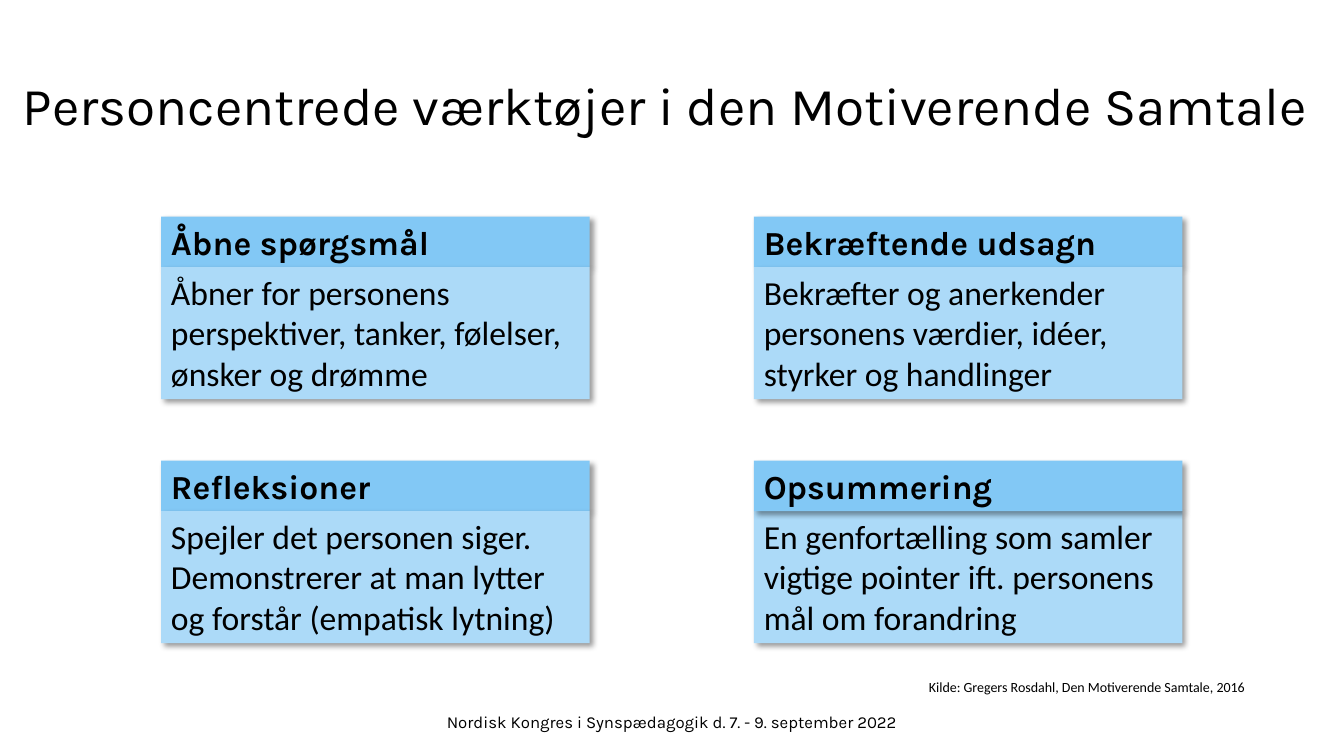
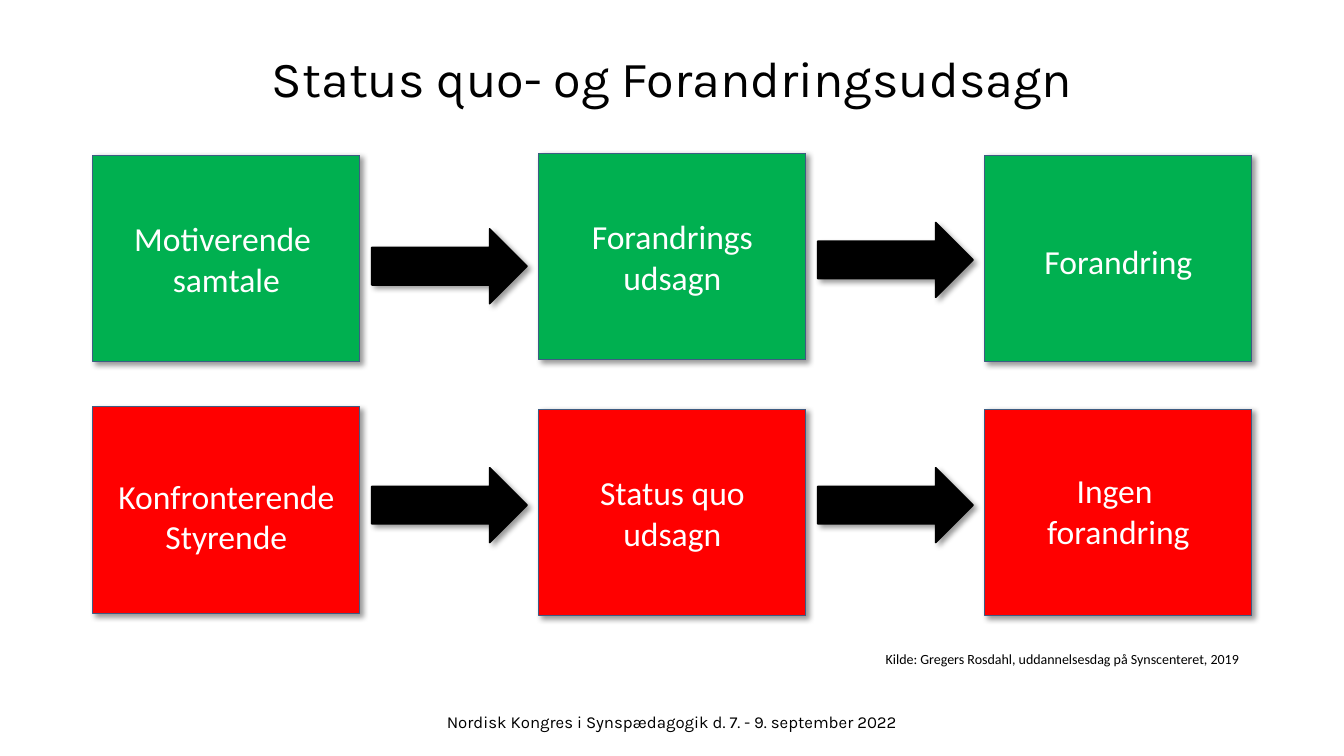
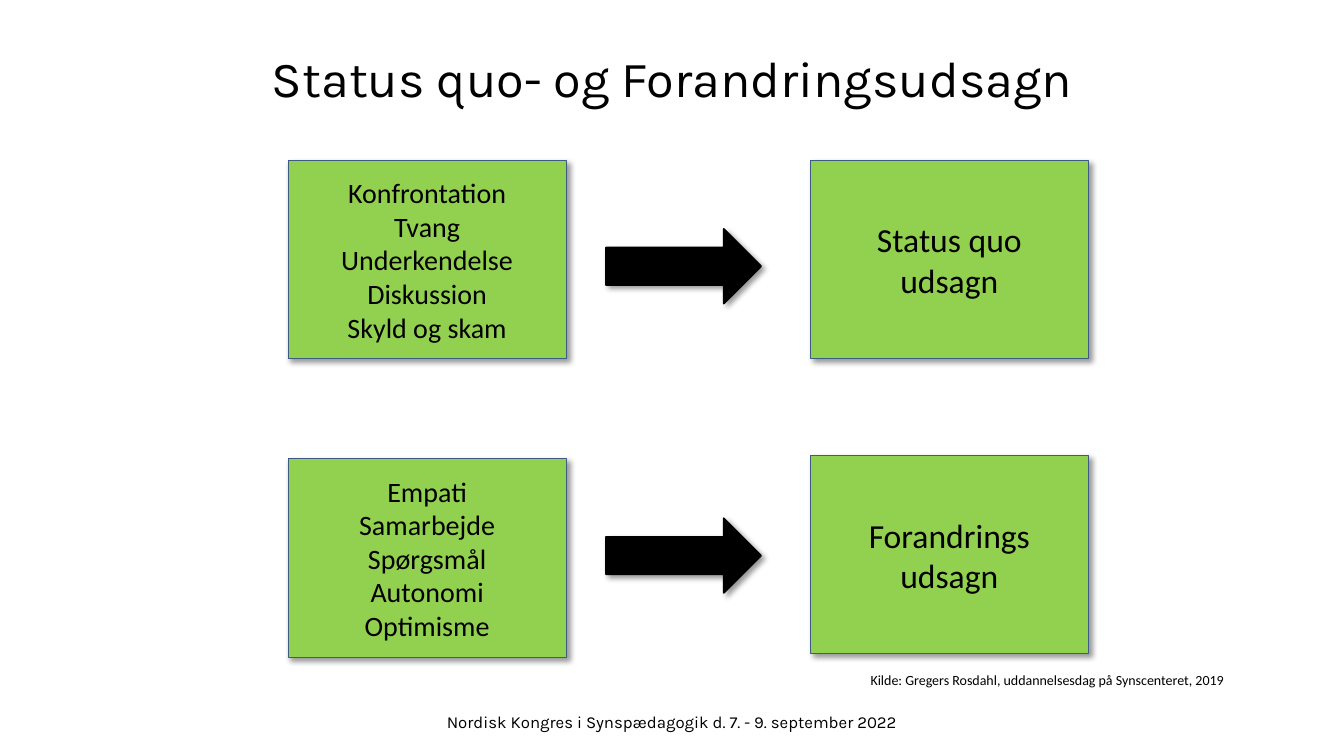
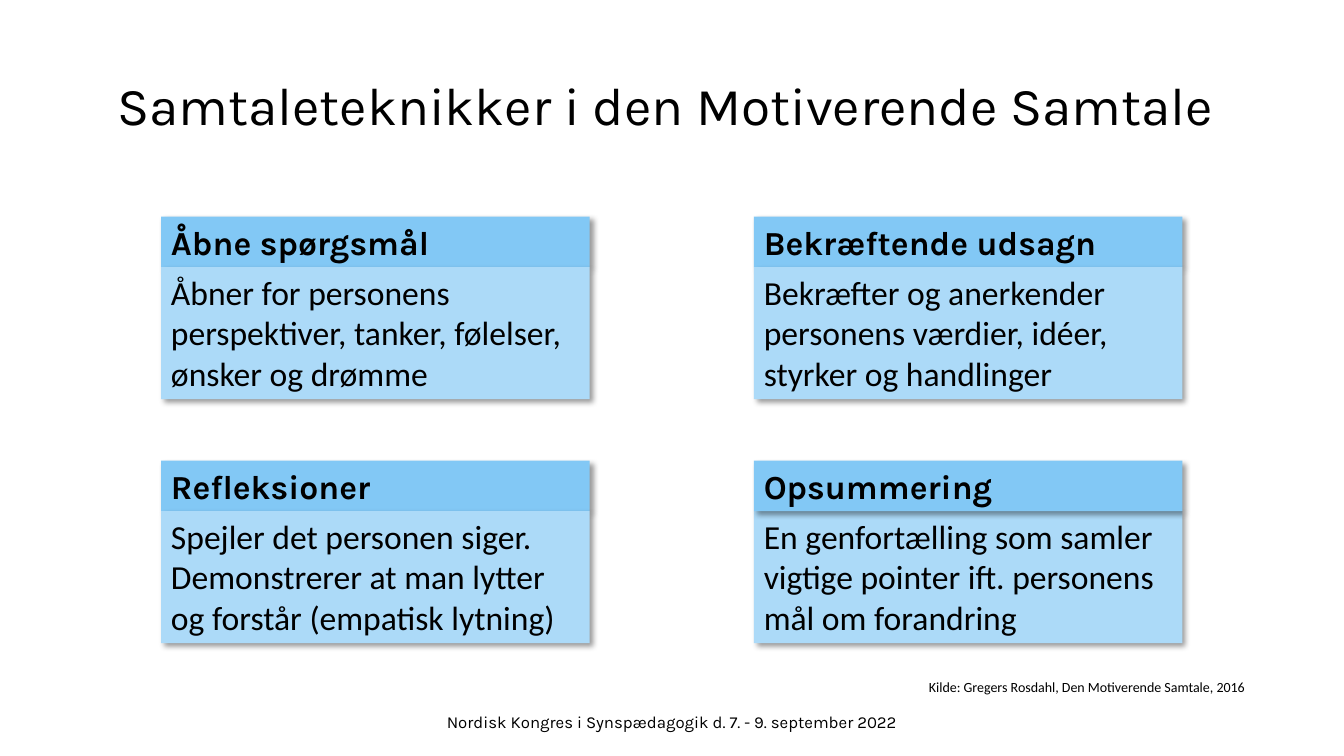
import lxml.etree
import pptx
import pptx.dml.color
import pptx.enum.shapes
import pptx.enum.text
import pptx.oxml.ns
import pptx.util

Cm, Pt = pptx.util.Cm, pptx.util.Pt
RECT = pptx.enum.shapes.MSO_SHAPE.RECTANGLE
ARROW = pptx.enum.shapes.MSO_SHAPE.RIGHT_ARROW
LEFT, CENTER = pptx.enum.text.PP_ALIGN.LEFT, pptx.enum.text.PP_ALIGN.CENTER
TOP, MIDDLE = pptx.enum.text.MSO_ANCHOR.TOP, pptx.enum.text.MSO_ANCHOR.MIDDLE

# Shared style, lengths in cm
SLIDE_W, SLIDE_H = 33.87, 19.05
HEADING_FONT, BODY_FONT = "Karla", "Calibri"
BLACK, WHITE = "000000", "FFFFFF"
HEADER_BLUE, BODY_BLUE = "82C8F5", "ACDAF8"
GREEN, RED, LIME, BOX_LINE = "00B050", "FF0000", "92D050", "3E5C83"
FOOTER = "Nordisk Kongres i Synspædagogik d. 7. - 9. september 2022"
INSET = 0.13

# Card slides: heading, text, whether the heading lies over the text
CARDS = [
    ("Åbne spørgsmål",
     "Åbner for personens perspektiver, tanker, følelser, ønsker og drømme", False),
    ("Bekræftende udsagn",
     "Bekræfter og anerkender\npersonens værdier, idéer,\nstyrker og handlinger", False),
    ("Refleksioner",
     "Spejler det personen siger.\n"
     "Demonstrerer at man lytter og forstår (empatisk lytning)", False),
    ("Opsummering",
     "En genfortælling som samler vigtige pointer ift. personens mål om forandring", True),
]
CARD_TITLE_AREA = (0, 0.76, SLIDE_W, 3.94)
CARD_SOURCE = ("Kilde: Gregers Rosdahl, Den Motiverende Samtale, 2016", 23.16, 16.97)

# Flow slides: each box is text, top, size, extra inset above the text
FLOW_TITLE = "Status quo- og Forandringsudsagn"
FLOW_TITLE_AREA = (2.34, 0.2, 29.21, 3.68)
FLOW_SOURCE = "Kilde: Gregers Rosdahl, uddannelsesdag på Synscenteret, 2019"
OUTCOME_FLOW = {
    "left": 2.34, "pitch": 11.24, "box": (6.73, 5.21), "arrow_gap": 0.3,
    "rows": [
        {"fill": GREEN, "color": WHITE, "arrow_tops": [5.77, 5.61],
         "boxes": [("Motiverende \nsamtale", 3.91, 24, 0),
                   ("Forandrings\nudsagn", 3.86, 24, 0),
                   ("Forandring", 3.91, 24, 0.1)]},
        {"fill": RED, "color": WHITE, "arrow_tops": [11.79, 11.79],
         "boxes": [("Konfronterende\nStyrende", 10.24, 24, 0.3),
                   ("Status quo\nudsagn", 10.31, 24, 0),
                   ("Ingen \nforandring", 10.31, 24, -0.1)]},
    ],
}
CAUSE_FLOW = {
    "left": 7.26, "pitch": 13.16, "box": (7.01, 5), "arrow_gap": 1,
    "rows": [
        {"fill": LIME, "color": BLACK, "arrow_tops": [5.77],
         "boxes": [("Konfrontation\nTvang\nUnderkendelse\nDiskussion\nSkyld og skam",
                    4.04, 20, 0),
                   ("Status quo\nudsagn", 4.04, 24, 0)]},
        {"fill": LIME, "color": BLACK, "arrow_tops": [13.06],
         "boxes": [("Empati\nSamarbejde\nSpørgsmål\nAutonomi\nOptimisme", 11.56, 20, 0),
                   ("Forandrings\nudsagn", 11.48, 24, 0)]},
    ],
}


def rgb(value):
    return pptx.dml.color.RGBColor.from_string(value)


def write(shape, text, size, font=BODY_FONT, color=BLACK, bold=False,
          align=LEFT, anchor=TOP, spacing=None):
    frame = shape.text_frame
    frame.word_wrap = True
    frame.vertical_anchor = anchor
    frame.text = text
    for paragraph in frame.paragraphs:
        paragraph.alignment = align
        paragraph.line_spacing = spacing
        for run in paragraph.runs:
            run.font.name, run.font.size, run.font.bold = font, Pt(size), bold
            run.font.color.rgb = rgb(color)


def add_label(slide, area, text, size, **style):
    label = slide.shapes.add_textbox(*map(Cm, area))
    write(label, text, size, **style)


def add_block(shapes, kind, area, fill, line=None, line_width=0.75):
    """Filled shape with the soft shadow that all blocks share."""
    block = shapes.add_shape(kind, *map(Cm, area))
    block.fill.solid()
    block.fill.fore_color.rgb = rgb(fill)
    if line:
        block.line.color.rgb = rgb(line)
        block.line.width = Pt(line_width)
    else:
        block.line.fill.background()
    block.shadow.inherit = False
    qn = pptx.oxml.ns.qn
    effects = block.element.spPr.find(qn("a:effectLst"))
    shadow = lxml.etree.SubElement(
        effects, qn("a:outerShdw"), blurRad=str(Pt(4)), dist=str(Pt(3)),
        dir=str(45 * 60000), algn="tl", rotWithShape="0")
    tint = lxml.etree.SubElement(shadow, qn("a:srgbClr"), val=BLACK)
    lxml.etree.SubElement(tint, qn("a:alpha"), val="40000")
    return block


def add_slide(deck, title, title_area, title_size, source):
    """Blank slide with title, source line and footer."""
    slide = deck.slides.add_slide(deck.slide_layouts[6])
    add_label(slide, title_area, title, title_size, font=HEADING_FONT,
              align=CENTER, anchor=MIDDLE, spacing=0.9)
    source_text, source_left, source_top = source
    add_label(slide, (source_left, source_top, 9.86, 0.68), source_text, 10)
    add_label(slide, (0, 17.81, SLIDE_W, 1.02), FOOTER, 12,
              font=HEADING_FONT, align=CENTER)
    return slide


def add_cards(slide):
    """Two by two cards, each a heading over a text."""
    width, header_h, body_h = 10.8, 1.27, 3.33
    for index, (heading, text, heading_over) in enumerate(CARDS):
        row, column = divmod(index, 2)
        left, top = 4.06 + column * 14.94, 5.46 + row * 6.15
        parts = [
            ((left, top, width, header_h), HEADER_BLUE, heading, HEADING_FONT, True),
            ((left, top + header_h, width, body_h), BODY_BLUE, text, BODY_FONT, False),
        ]
        card = slide.shapes.add_group_shape()
        for area, fill, words, font, bold in reversed(parts) if heading_over else parts:
            block = add_block(card.shapes, RECT, area, fill)
            write(block, words, 24, font=font, bold=bold)


def add_flow(slide, flow):
    """Rows of boxes with an arrow after every box but the last."""
    width, height = flow["box"]
    for row in flow["rows"]:
        for column, (text, top, size, extra) in enumerate(row["boxes"]):
            left = flow["left"] + column * flow["pitch"]
            box = add_block(slide.shapes, RECT, (left, top, width, height),
                            row["fill"], BOX_LINE)
            write(box, text, size, color=row["color"], align=CENTER, anchor=MIDDLE)
            box.text_frame.margin_top = Cm(INSET + extra)
        for column, top in enumerate(row["arrow_tops"]):
            left = flow["left"] + column * flow["pitch"] + width + flow["arrow_gap"]
            add_block(slide.shapes, ARROW, (left, top, 3.91, 1.88), BLACK, BLACK, 1.25)


def main():
    deck = pptx.Presentation()
    deck.slide_width, deck.slide_height = Cm(SLIDE_W), Cm(SLIDE_H)

    def card_slide(title):
        add_cards(add_slide(deck, title, CARD_TITLE_AREA, 38, CARD_SOURCE))

    def flow_slide(flow, source_left, source_top):
        source = (FLOW_SOURCE, source_left, source_top)
        add_flow(add_slide(deck, FLOW_TITLE, FLOW_TITLE_AREA, 36, source), flow)

    card_slide("Personcentrede værktøjer i den Motiverende Samtale ")
    flow_slide(OUTCOME_FLOW, 22.07, 16.26)
    flow_slide(CAUSE_FLOW, 21.69, 16.79)
    card_slide("Samtaleteknikker i den Motiverende Samtale ")
    deck.save("out.pptx")


if __name__ == "__main__":
    main()
